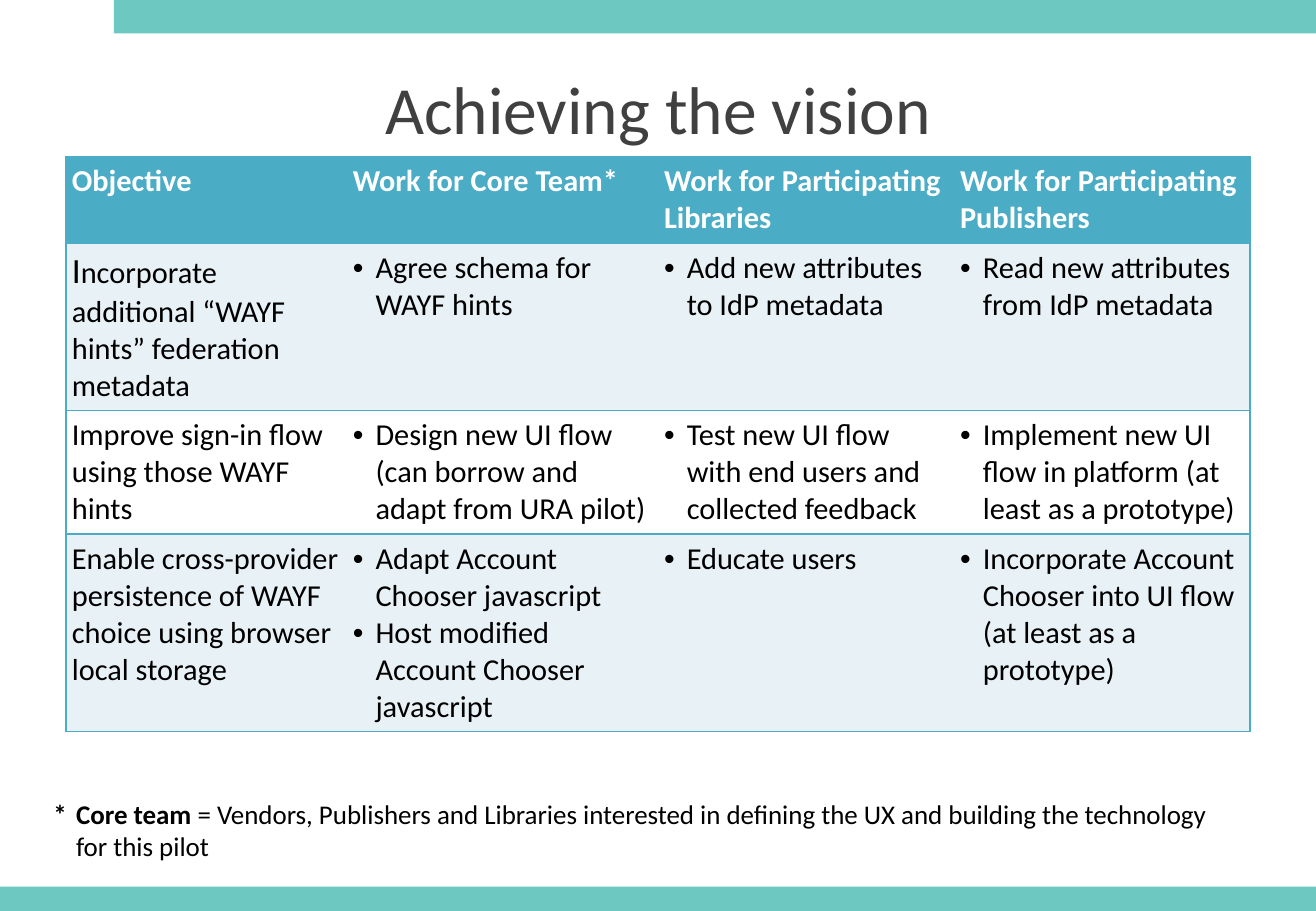
from dataclasses import dataclass

from lxml import etree
from pptx import Presentation
from pptx.dml.color import RGBColor
from pptx.enum.shapes import MSO_SHAPE
from pptx.enum.text import MSO_ANCHOR, MSO_AUTO_SIZE, PP_ALIGN
from pptx.oxml.ns import qn
from pptx.util import Pt

RECT = MSO_SHAPE.RECTANGLE
TOP = MSO_ANCHOR.TOP
NO_FIT = MSO_AUTO_SIZE.NONE
CENTER = PP_ALIGN.CENTER

TITLE = "Achieving the vision"
HEADS = ["Objective", "Work for Core Team*",
         "Work for Participating Libraries", "Work for Participating Publishers"]
# Each row: objective, then a list of tasks for each group
ROWS = [
    ("Incorporate additional “WAYF hints” federation metadata",
     ["Agree schema for WAYF hints"],
     ["Add new attributes to IdP metadata"],
     ["Read new attributes from IdP metadata"]),
    ("Improve sign-in flow using those WAYF hints",
     ["Design new UI flow (can borrow and adapt from URA pilot)"],
     ["Test new UI flow with end users and collected feedback"],
     ["Implement new UI flow in platform (at least as a prototype)"]),
    ("Enable cross-provider persistence of WAYF choice using browser local storage",
     ["Adapt Account Chooser javascript", "Host modified Account Chooser javascript"],
     ["Educate users"],
     ["Incorporate Account Chooser into UI flow (at least as a prototype)"]),
]
NOTE = [("*\tCore team ", True),
        ("= Vendors, Publishers and Libraries interested in defining the UX "
         "and building the technology for this pilot", False)]

WIDE, HIGH = 780, 540
LEFT, SPAN = 39, 702
COLS = [166.5, 184.5, 175.5, 175.5]
HEIGHTS = [51.5, 99, 73, 117]
BARS = [(0, 525.6, WIDE, 14.4), (67.5, 0, WIDE - 67.5, 19.8)]
INSET, HANG = 3.6, 13.5


@dataclass(frozen=True)
class Theme:
    font: str = "Calibri"
    bar: str = "6DC8C1"
    head: str = "4BACC6"
    band: str = "E8F1F5"
    white: str = "FFFFFF"
    ink: str = "000000"
    title: str = "404040"
    title_size: int = 40
    cell_size: int = 18
    cap_size: int = 21
    note_size: int = 16


LOOK = Theme()


def add_run(para, text, size, color, bold=False):
    run = para.add_run()
    run.text = text
    font = run.font
    font.name, font.size, font.bold = LOOK.font, Pt(size), bold
    font.color.rgb = RGBColor.from_string(color)


def hang(para, bullet=None):
    """Give the paragraph a hanging indent and, if asked, a bullet."""
    props = para._p.get_or_add_pPr()
    props.set("marL", str(Pt(HANG)))
    props.set("indent", str(-Pt(HANG)))
    if bullet:
        font = etree.SubElement(props, qn("a:buFont"))
        font.set("typeface", "Arial")
        etree.SubElement(props, qn("a:buChar")).set("char", bullet)


def set_inset(box):
    box.margin_left = box.margin_right = Pt(INSET)
    box.margin_top = box.margin_bottom = Pt(INSET)


def set_edges(cell, shown):
    """Draw the named sides of a cell and clear the others."""
    props = cell._tc.get_or_add_tcPr()
    for spot, side in enumerate("LRTB"):
        line = etree.Element(qn("a:ln" + side), w=str(Pt(1)))
        if side in shown:
            fill = etree.SubElement(line, qn("a:solidFill"))
            etree.SubElement(fill, qn("a:srgbClr")).set("val", LOOK.head)
        else:
            etree.SubElement(line, qn("a:noFill"))
        props.insert(spot, line)


def add_bars(slide):
    for box in BARS:
        bar = slide.shapes.add_shape(RECT, *map(Pt, box))
        bar.shadow.inherit = False
        bar.fill.solid()
        bar.fill.fore_color.rgb = RGBColor.from_string(LOOK.bar)
        bar.line.fill.background()


def add_title(slide):
    title = slide.shapes.title
    title.left, title.top = Pt(LEFT), Pt(36)
    title.width, title.height = Pt(SPAN), Pt(90)
    frame = title.text_frame
    set_inset(frame)
    frame.word_wrap, frame.auto_size = True, NO_FIT
    frame.vertical_anchor = TOP
    para = frame.paragraphs[0]
    para.alignment = CENTER
    add_run(para, TITLE, LOOK.title_size, LOOK.title)


def fill_cell(cell, row, col, item):
    frame = cell.text_frame
    para = frame.paragraphs[0]
    if row == 0:
        add_run(para, item, LOOK.cell_size, LOOK.white, True)
    elif col == 0:
        cap = LOOK.cap_size if row == 1 else LOOK.cell_size
        add_run(para, item[0], cap, LOOK.ink)
        add_run(para, item[1:], LOOK.cell_size, LOOK.ink)
    else:
        for num, task in enumerate(item):
            para = frame.add_paragraph() if num else para
            hang(para, "•")
            add_run(para, task, LOOK.cell_size, LOOK.ink)


def add_grid(slide):
    data = [HEADS, *ROWS]
    last = len(COLS) - 1
    frame = slide.shapes.add_table(len(data), len(COLS), Pt(LEFT), Pt(93),
                                   Pt(SPAN), Pt(sum(HEIGHTS)))
    table = frame.table
    table.horz_banding = False
    for col, width in enumerate(COLS):
        table.columns[col].width = Pt(width)
    for row, items in enumerate(data):
        table.rows[row].height = Pt(HEIGHTS[row])
        color = LOOK.head if row == 0 else LOOK.band if row % 2 else LOOK.white
        for col, item in enumerate(items):
            cell = table.cell(row, col)
            set_inset(cell)
            cell.fill.solid()
            cell.fill.fore_color.rgb = RGBColor.from_string(color)
            set_edges(cell, "TB" + "L" * (col == 0) + "R" * (col == last))
            fill_cell(cell, row, col, item)


def add_note(slide):
    box = slide.shapes.add_textbox(Pt(28), Pt(469), Pt(713), Pt(45))
    frame = box.text_frame
    frame.word_wrap = True
    set_inset(frame)
    para = frame.paragraphs[0]
    hang(para)
    for text, bold in NOTE:
        add_run(para, text, LOOK.note_size, LOOK.ink, bold)


def main():
    deck = Presentation()
    deck.slide_width, deck.slide_height = Pt(WIDE), Pt(HIGH)
    slide = deck.slides.add_slide(deck.slide_layouts[5])
    add_bars(slide)
    add_title(slide)
    add_grid(slide)
    add_note(slide)
    deck.save("out.pptx")


if __name__ == "__main__":
    main()
